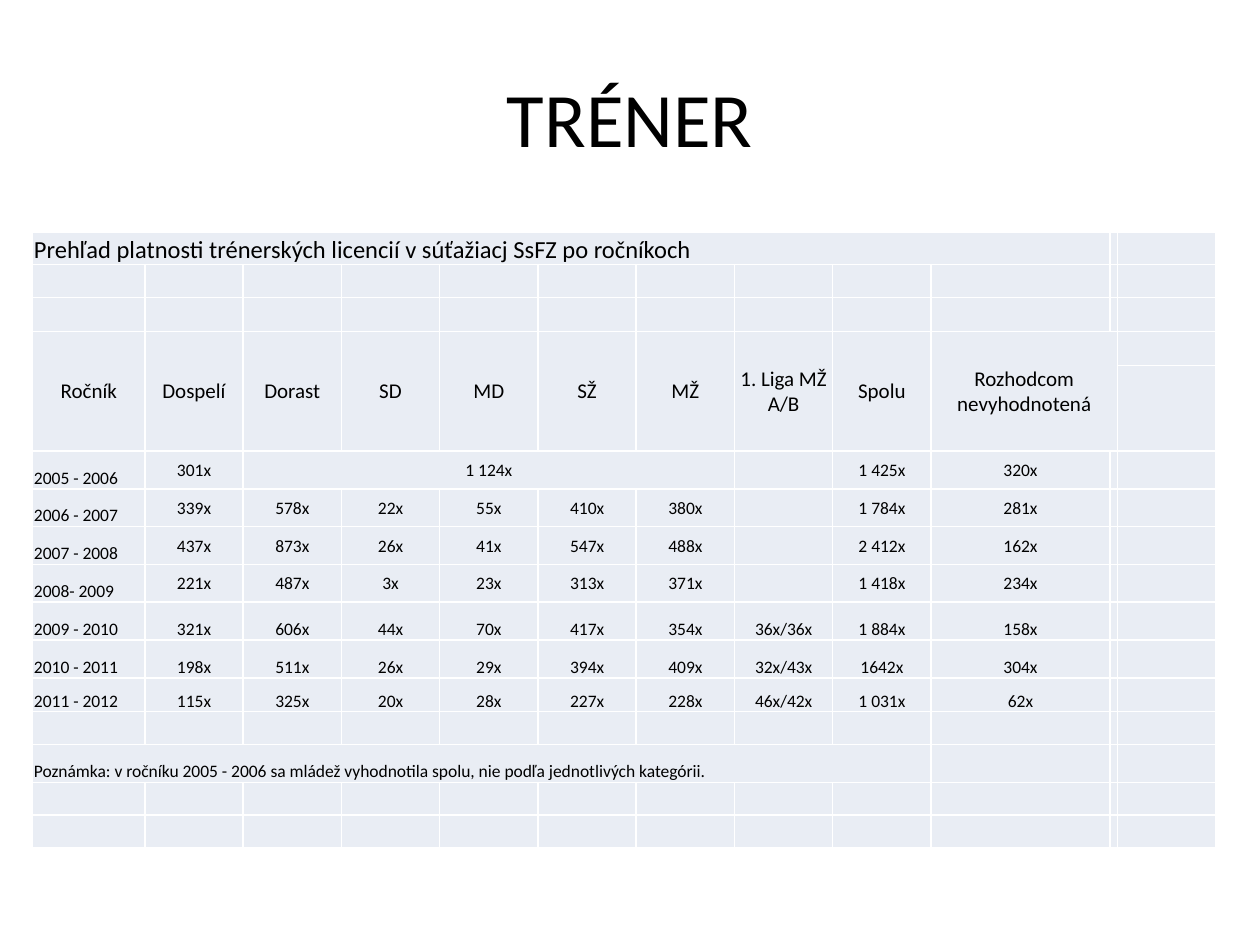
from lxml import etree
from pptx import Presentation
from pptx.dml.color import RGBColor
from pptx.enum.text import MSO_ANCHOR, PP_ALIGN
from pptx.oxml.ns import qn
from pptx.util import Inches, Pt

MIDDLE, BOTTOM = MSO_ANCHOR.MIDDLE, MSO_ANCHOR.BOTTOM
LEFT, CENTER = PP_ALIGN.LEFT, PP_ALIGN.CENTER

FONT = "Calibri"
BLACK, WHITE, PALE = "000000", "FFFFFF", "E9EDF4"
COLUMN_WIDTHS = [0.89] + [0.78] * 8 + [1.42, 0.06, 0.78]
ROW_HEIGHTS = [0.26, 0.26, 0.27, 0.27, 0.68] + [0.3] * 6 + [0.27, 0.26, 0.3, 0.26, 0.26]
HEADER_ROW, FIRST_SEASON_ROW, FIRST_BOTTOM_ROW, NOTE_ROW = 3, 5, 9, 13

OVERVIEW = "Prehľad platnosti trénerských licencií v súťažiacj SsFZ po ročníkoch"
NOTE = ("Poznámka: v ročníku 2005 - 2006 sa mládež vyhodnotila spolu, "
        "nie podľa jednotlivých kategórii.")
HEADERS = ["Ročník", "Dospelí", "Dorast", "SD", "MD", "SŽ", "MŽ",
           "1. Liga MŽ\vA/B", "Spolu", "Rozhodcom\vnevyhodnotená"]
SEASONS = [
    ["2005 - 2006", "301x", "1 124x", "", "", "", "", "", "1 425x", "320x"],
    ["2006 - 2007", "339x", "578x", "22x", "55x", "410x", "380x", "", "1 784x", "281x"],
    ["2007 - 2008", "437x", "873x", "26x", "41x", "547x", "488x", "", "2 412x", "162x"],
    ["2008- 2009", "221x", "487x", "3x", "23x", "313x", "371x", "", "1 418x", "234x"],
    ["2009 - 2010", "321x", "606x", "44x", "70x", "417x", "354x", "36x/36x", "1 884x", "158x"],
    ["2010 - 2011", "198x", "511x", "26x", "29x", "394x", "409x", "32x/43x", "1642x", "304x"],
    ["2011 - 2012", "115x", "325x", "20x", "28x", "227x", "228x", "46x/42x", "1 031x", "62x"],
]


def color(value):
    return RGBColor.from_string(value)


def format_runs(paragraph, size):
    for run in paragraph.runs:
        run.font.name = FONT
        run.font.size = Pt(size)
        run.font.color.rgb = color(BLACK)


def add_title(slide, text):
    title = slide.shapes.title
    title.left, title.top = Inches(0.5), Inches(0.3)
    title.width, title.height = Inches(9), Inches(1.25)
    title.text_frame.text = text
    title.text_frame.vertical_anchor = MIDDLE
    heading = title.text_frame.paragraphs[0]
    heading.alignment = CENTER
    format_runs(heading, 44)


def style_cell(cell):
    cell.margin_left = cell.margin_top = cell.margin_right = Inches(0.01)
    cell.margin_bottom = 0
    properties = cell._tc.get_or_add_tcPr()
    for side in ("a:lnL", "a:lnR", "a:lnT", "a:lnB"):
        border = etree.SubElement(properties, qn(side), w=str(Pt(1)))
        border_fill = etree.SubElement(border, qn("a:solidFill"))
        etree.SubElement(border_fill, qn("a:srgbClr"), val=WHITE)
    cell.fill.solid()
    cell.fill.fore_color.rgb = color(PALE)


def write_cell(cell, text, size, alignment, anchor):
    cell.text_frame.text = text
    cell.vertical_anchor = anchor
    paragraph = cell.text_frame.paragraphs[0]
    paragraph.alignment = alignment
    format_runs(paragraph, size)


def set_empty_size(cell):
    paragraph = cell.text_frame.paragraphs[0]
    if not paragraph.runs:
        etree.SubElement(paragraph._p, qn("a:endParaRPr"), sz="1000")


def add_license_table(slide):
    table = slide.shapes.add_table(
        len(ROW_HEIGHTS), len(COLUMN_WIDTHS), Inches(0.26), Inches(1.84),
        Inches(sum(COLUMN_WIDTHS)), Inches(sum(ROW_HEIGHTS))).table
    table.first_row = table.horz_banding = False
    for column, width in zip(table.columns, COLUMN_WIDTHS):
        column.width = Inches(width)
    for row, height in zip(table.rows, ROW_HEIGHTS):
        row.height = Inches(height)
    for cell in table.iter_cells():
        style_cell(cell)

    write_cell(table.cell(0, 0), OVERVIEW, 14, LEFT, BOTTOM)
    for column, header in enumerate(HEADERS):
        write_cell(table.cell(HEADER_ROW, column), header, 12, CENTER, MIDDLE)
    for row, season in enumerate(SEASONS, FIRST_SEASON_ROW):
        for column, value in enumerate(season):
            if value:
                anchor = BOTTOM if column == 0 or row >= FIRST_BOTTOM_ROW else MIDDLE
                write_cell(table.cell(row, column), value, 10,
                           CENTER if column else LEFT, anchor)
    write_cell(table.cell(NOTE_ROW, 0), NOTE, 10, LEFT, BOTTOM)
    for cell in table.iter_cells():
        set_empty_size(cell)

    table.cell(0, 0).merge(table.cell(0, 9))
    for column in range(9):
        table.cell(HEADER_ROW, column).merge(table.cell(HEADER_ROW + 1, column))
    table.cell(HEADER_ROW, 9).merge(table.cell(HEADER_ROW + 1, 10))
    table.cell(FIRST_SEASON_ROW, 2).merge(table.cell(FIRST_SEASON_ROW, 6))
    table.cell(NOTE_ROW, 0).merge(table.cell(NOTE_ROW, 8))


def main():
    presentation = Presentation()
    presentation.slide_width, presentation.slide_height = Inches(10), Inches(7.5)
    slide = presentation.slides.add_slide(presentation.slide_layouts[5])
    add_title(slide, "TRÉNER")
    add_license_table(slide)
    presentation.save("out.pptx")


if __name__ == "__main__":
    main()
